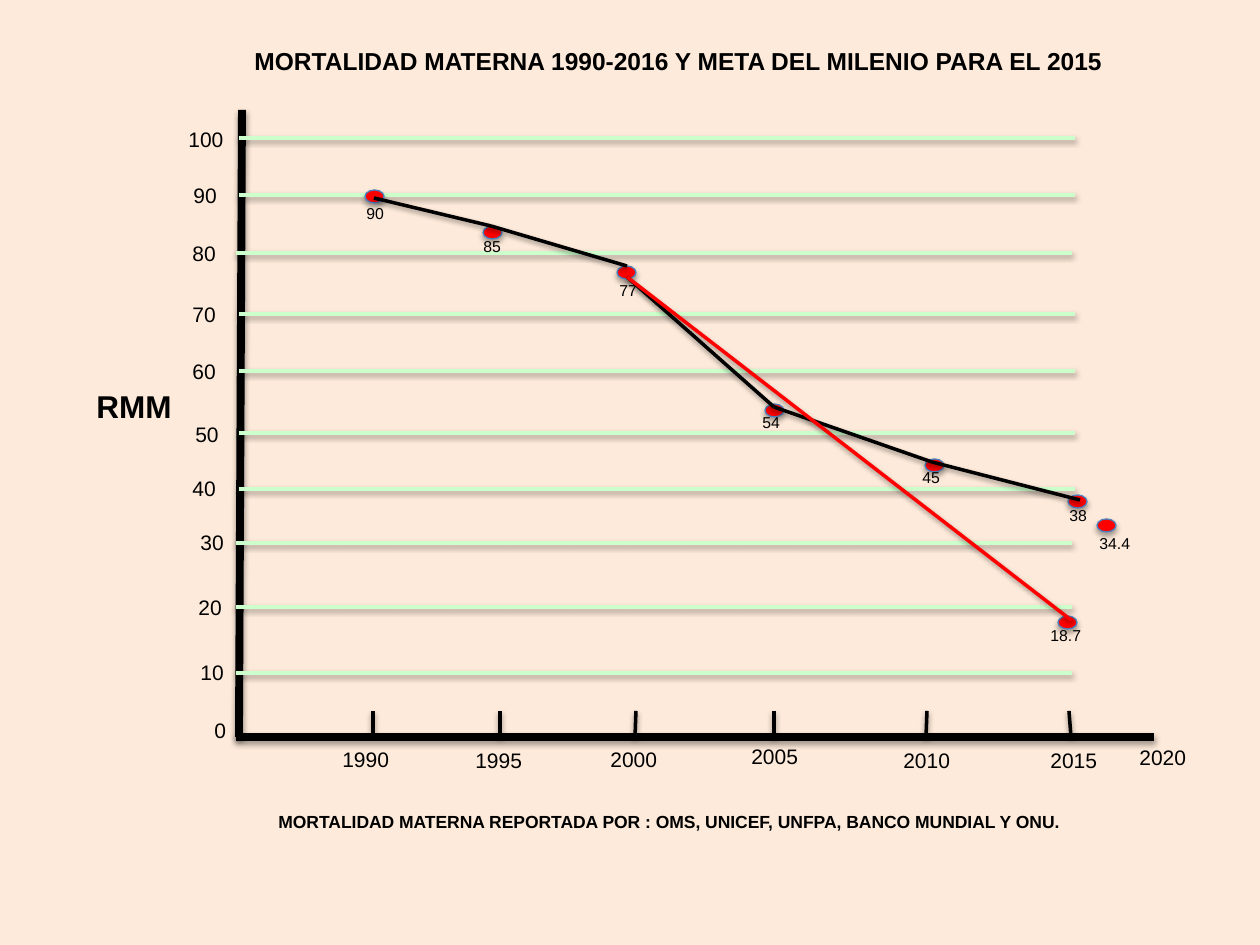
import itertools
from typing import NamedTuple

import lxml.etree
import pptx
import pptx.dml.color
import pptx.enum.shapes
import pptx.enum.text
import pptx.oxml.ns
import pptx.util

PX_PER_INCH = 126
PEACH = pptx.dml.color.RGBColor(0xFD, 0xEA, 0xDA)
MINT = pptx.dml.color.RGBColor(0xCC, 0xFF, 0xCC)
BLACK = pptx.dml.color.RGBColor(0, 0, 0)
RED = pptx.dml.color.RGBColor(0xFF, 0, 0)
BLUE = pptx.dml.color.RGBColor(0x4B, 0x7E, 0xBC)
GRID_WIDTH = 836
TICK_TOP = 711
DOT_WIDTH, DOT_HEIGHT = 19, 13


class Label(NamedTuple):
    text: str
    left: int
    top: int
    width: int
    height: int = 38
    size: int = 12
    bold: bool = False
    wrap: bool = True


class Tick(NamedTuple):
    foot_x: int
    foot_y: int
    head_x: int


class Rate(NamedTuple):
    value: str
    dot_left: int
    dot_top: int
    label_left: int
    label_top: int
    label_width: int


GRID = [
    (236, 673), (236, 607), (236, 543), (239, 489), (239, 433),
    (239, 371), (239, 314), (236, 253), (239, 195), (239, 138),
]
SCALE_LABELS = [
    Label("0", 202, 711, 38, wrap=False),
    *(Label(text, left, top, 49, wrap=False) for text, left, top in [
        ("10", 188, 653), ("20", 186, 588), ("30", 188, 523),
        ("40", 180, 469), ("50", 183, 415), ("60", 180, 352),
        ("70", 180, 295), ("80", 180, 234), ("90", 181, 176),
    ]),
    Label("100", 176, 120, 72),
]
TICKS = [
    Tick(373, 733, 373), Tick(500, 738, 500), Tick(635, 738, 636),
    Tick(774, 738, 774), Tick(926, 738, 927), Tick(1071, 737, 1069),
]
YEAR_LABELS = [
    Label(year, left, top, 78) for year, left, top in [
        ("1990", 330, 740), ("1995", 463, 741), ("2000", 598, 740),
        ("2005", 739, 737), ("2010", 891, 741), ("2015", 1038, 741),
        ("2020", 1127, 738),
    ]
]
RATES = [
    Rate("90", 365, 190, 354, 198, 43),
    Rate("85", 483, 226, 471, 231, 43),
    Rate("77", 617, 266, 607, 275, 54),
    Rate("54", 765, 404, 750, 407, 48),
    Rate("45", 925, 459, 910, 462, 45),
    Rate("38", 1068, 495, 1057, 500, 44),
    Rate("34.4", 1097, 519, 1087, 528, 57),
    Rate("18.7", 1058, 616, 1038, 620, 67),
]
HEADINGS = [
    Label("RMM", 84, 381, 102, 51, 18, True),
    Label("MORTALIDAD MATERNA 1990-2016 Y META DEL MILENIO PARA EL 2015",
          242, 40, 878, 43, 14, True),
    Label("MORTALIDAD MATERNA REPORTADA POR : OMS, UNICEF, UNFPA, BANCO MUNDIAL Y ONU.",
          266, 805, 825, 34, 10, True),
]
TRENDS = [
    (BLACK, [(374, 198), (491, 226), (627, 266)]),
    (BLACK, [(627, 277), (774, 407), (932, 462), (1080, 500)]),
    (RED, [(627, 277), (1071, 620)]),
]


def px(length: int) -> pptx.util.Emu:
    return pptx.util.Emu(round(length * 914400 / PX_PER_INCH))


def cast_shadow(shape, opacity: int, distance: float) -> None:
    qn = pptx.oxml.ns.qn
    effects = lxml.etree.SubElement(shape._element.spPr, qn("a:effectLst"))
    shadow = lxml.etree.SubElement(
        effects, qn("a:outerShdw"), blurRad=str(pptx.util.Pt(3.1)),
        dist=str(pptx.util.Pt(distance)), dir="5400000", rotWithShape="0")
    tint = lxml.etree.SubElement(shadow, qn("a:srgbClr"), val=str(BLACK))
    lxml.etree.SubElement(tint, qn("a:alpha"), val=str(opacity * 1000))


def draw_line(slide, start: tuple[int, int], end: tuple[int, int],
              color: pptx.dml.color.RGBColor, weight: float = 2) -> None:
    line = slide.shapes.add_connector(
        pptx.enum.shapes.MSO_CONNECTOR.STRAIGHT, *map(px, (*start, *end)))
    line.line.color.rgb = color
    line.line.width = pptx.util.Pt(weight)
    cast_shadow(line, 38, 1.6)


def draw_label(slide, label: Label) -> None:
    box = slide.shapes.add_textbox(
        *map(px, (label.left, label.top, label.width, label.height)))
    frame = box.text_frame
    frame.word_wrap = label.wrap
    frame.auto_size = pptx.enum.text.MSO_AUTO_SIZE.SHAPE_TO_FIT_TEXT
    paragraph = frame.paragraphs[0]
    paragraph.text = label.text
    paragraph.font.name = "Arial"
    paragraph.font.size = pptx.util.Pt(label.size)
    paragraph.font.bold = label.bold
    paragraph.font.color.rgb = BLACK


def draw_dot(slide, rate: Rate) -> None:
    dot = slide.shapes.add_shape(
        pptx.enum.shapes.MSO_SHAPE.OVAL,
        *map(px, (rate.dot_left, rate.dot_top, DOT_WIDTH, DOT_HEIGHT)))
    dot.fill.solid()
    dot.fill.fore_color.rgb = RED
    dot.line.color.rgb = BLUE
    dot.line.width = pptx.util.Pt(0.75)
    cast_shadow(dot, 35, 1.8)


def main() -> None:
    deck = pptx.Presentation()
    deck.slide_width = px(1260)
    deck.slide_height = px(945)
    slide = deck.slides.add_slide(deck.slide_layouts[6])
    slide.background.fill.solid()
    slide.background.fill.fore_color.rgb = PEACH

    draw_line(slide, (242, 110), (239, 737), BLACK, 4.5)
    draw_line(slide, (236, 737), (1154, 737), BLACK, 4.5)
    for left, y in GRID:
        draw_line(slide, (left, y), (left + GRID_WIDTH, y), MINT)
    for tick in TICKS:
        draw_line(slide, (tick.foot_x, tick.foot_y), (tick.head_x, TICK_TOP), BLACK)
    for label in SCALE_LABELS + YEAR_LABELS + HEADINGS:
        draw_label(slide, label)
    for rate in RATES:
        draw_dot(slide, rate)
        draw_label(slide, Label(rate.value, rate.label_left, rate.label_top,
                                rate.label_width, 31, 9))
    for color, points in TRENDS:
        for start, end in itertools.pairwise(points):
            draw_line(slide, start, end, color)

    deck.save("out.pptx")


if __name__ == "__main__":
    main()
